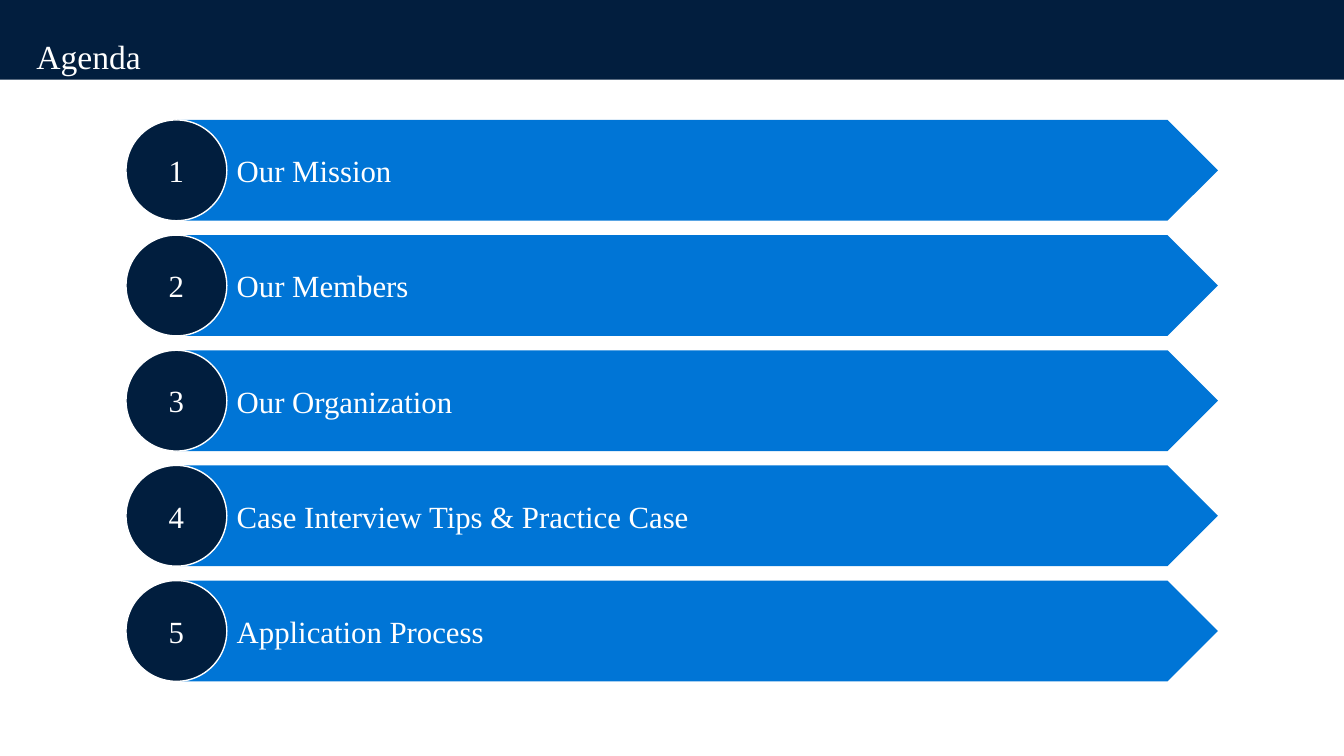
from dataclasses import dataclass

from pptx import Presentation
from pptx.dml.color import RGBColor
from pptx.enum.shapes import MSO_SHAPE
from pptx.enum.text import MSO_ANCHOR, MSO_AUTO_SIZE, PP_ALIGN
from pptx.util import Inches, Pt

RECTANGLE, CHEVRON, OVAL = MSO_SHAPE.RECTANGLE, MSO_SHAPE.CHEVRON, MSO_SHAPE.OVAL
TOP, MIDDLE = MSO_ANCHOR.TOP, MSO_ANCHOR.MIDDLE
LEFT, CENTER = PP_ALIGN.LEFT, PP_ALIGN.CENTER
NO_AUTOFIT = MSO_AUTO_SIZE.NONE

COLORS = {"banner": "021E3E", "badge": "011E3E", "arrow": "0075D6", "white": "FFFFFF"}
FONT = "Times New Roman"
SLIDE_WIDTH, SLIDE_HEIGHT = 13.33, 7.5
FIRST_TOP, LAST_TOP = 1.19, 5.76
ROW_HEIGHT = 1
BADGE_LEFT = 1.25
ARROW_LEFT, ARROW_WIDTH = BADGE_LEFT + ROW_HEIGHT / 2, 10.33


@dataclass
class AgendaItem:
    number: int
    topic: str
    top: float


TOPICS = [
    "Our Mission",
    "Our Members",
    "Our Organization",
    "Case Interview Tips & Practice Case",
    "Application Process",
]
ROW_PITCH = (LAST_TOP - FIRST_TOP) / (len(TOPICS) - 1)
AGENDA = [
    AgendaItem(row + 1, topic, FIRST_TOP + row * ROW_PITCH)
    for row, topic in enumerate(TOPICS)
]


def write_text(shape, text: str, *, size=22, align=LEFT, anchor=MIDDLE, spacing=1.0) -> None:
    frame = shape.text_frame
    frame.word_wrap = True
    frame.auto_size = NO_AUTOFIT
    frame.vertical_anchor = anchor
    frame.margin_left = frame.margin_right = Inches(0.1)
    frame.margin_top = frame.margin_bottom = Inches(0.05)
    paragraph = frame.paragraphs[0]
    paragraph.alignment = align
    paragraph.line_spacing = spacing
    run = paragraph.add_run()
    run.text = text
    run.font.name = FONT
    run.font.size = Pt(size)
    run.font.color.rgb = RGBColor.from_string(COLORS["white"])


def add_filled(shapes, kind, left: float, top: float, width: float, height: float, color: str):
    shape = shapes.add_shape(kind, Inches(left), Inches(top), Inches(width), Inches(height))
    shape.shadow.inherit = False
    shape.fill.solid()
    shape.fill.fore_color.rgb = RGBColor.from_string(COLORS[color])
    shape.line.fill.background()
    return shape


def add_agenda_row(shapes, item: AgendaItem) -> None:
    arrow = add_filled(shapes, CHEVRON, ARROW_LEFT, item.top, ARROW_WIDTH, ROW_HEIGHT, "arrow")
    arrow.adjustments[0] = 0.5
    write_text(arrow, item.topic)

    badge = add_filled(shapes, OVAL, BADGE_LEFT, item.top, ROW_HEIGHT, ROW_HEIGHT, "badge")
    badge.line.color.rgb = RGBColor.from_string(COLORS["white"])
    badge.line.width = Pt(1)
    write_text(badge, str(item.number), align=CENTER)


def add_heading(slide, text: str) -> None:
    """Place the title in front of a full-width banner."""
    title = slide.shapes.title
    title.left, title.top = Inches(0.26), Inches(0.35)
    title.width, title.height = Inches(9.39), Inches(0.48)
    write_text(title, text, size=24, anchor=TOP, spacing=0.9)
    banner = add_filled(slide.shapes, RECTANGLE, 0, 0, SLIDE_WIDTH, 0.79, "banner")
    title.element.addprevious(banner.element)


def main() -> None:
    deck = Presentation()
    deck.slide_width, deck.slide_height = Inches(SLIDE_WIDTH), Inches(SLIDE_HEIGHT)
    slide = deck.slides.add_slide(deck.slide_layouts.get_by_name("Title Only"))
    add_heading(slide, "Agenda")
    agenda_list = slide.shapes.add_group_shape()
    for item in AGENDA:
        add_agenda_row(agenda_list.shapes, item)
    deck.save("out.pptx")


if __name__ == "__main__":
    main()
